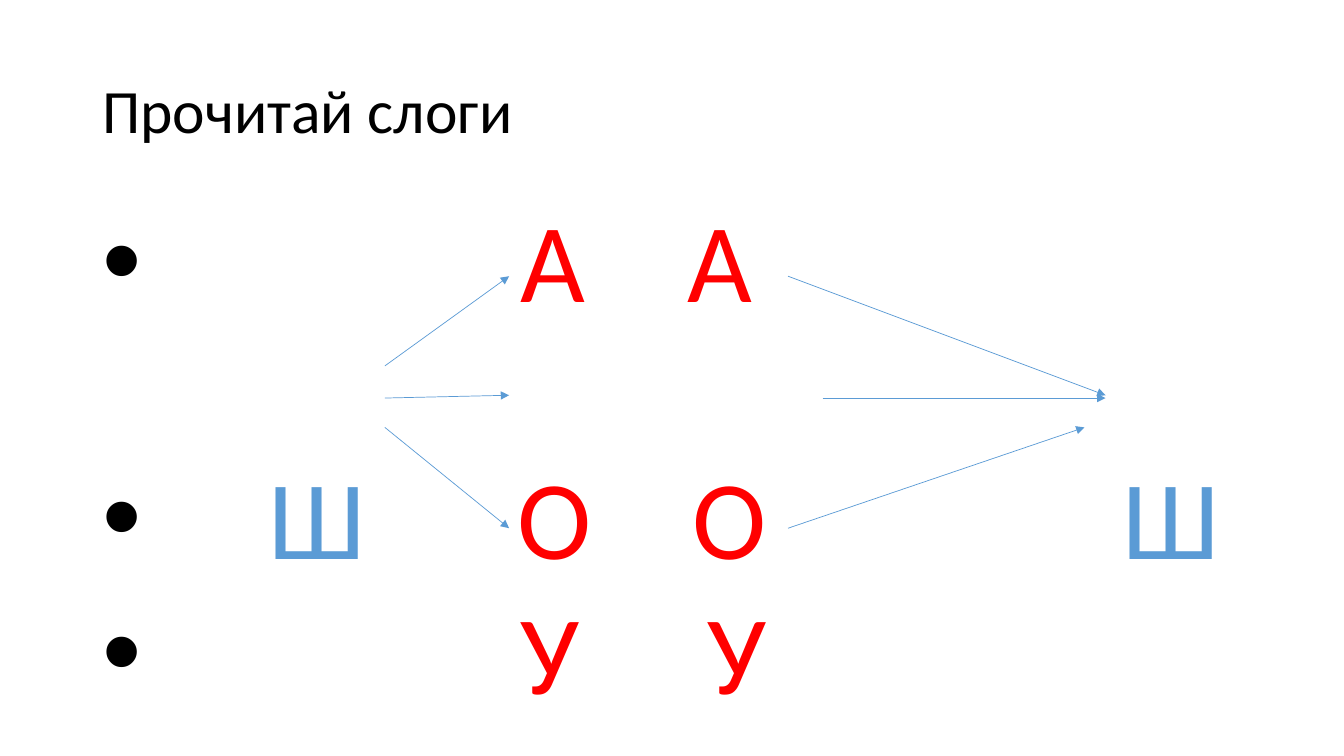
from dataclasses import dataclass

from lxml.etree import SubElement
from pptx import Presentation
from pptx.dml.color import RGBColor as Rgb
from pptx.enum.shapes import MSO_CONNECTOR as Connector
from pptx.enum.text import MSO_ANCHOR as Anchor
from pptx.oxml.ns import qn
from pptx.util import Cm, Pt


@dataclass(frozen=True)
class Theme:
    """Colours, font and type sizes of the slide."""
    font: str = "Calibri"
    ink: Rgb = Rgb(0x00, 0x00, 0x00)
    vowel: Rgb = Rgb(0xFF, 0x00, 0x00)
    consonant: Rgb = Rgb(0x5B, 0x9B, 0xD5)
    title_size: int = 44
    letter_size: int = 80
    arrow_width: float = 0.5


class SyllablePage:
    """Draws the elements of one page in one theme."""

    def __init__(self, deck, theme):
        self.theme = theme
        self.page = deck.slides.add_slide(deck.slide_layouts[6])

    def add_box(self, left, top, width, height, anchor):
        box = self.page.shapes.add_textbox(Cm(left), Cm(top), Cm(width), Cm(height))
        box.text_frame.word_wrap = True
        box.text_frame.vertical_anchor = anchor
        return box.text_frame

    def add_span(self, para, text, size, color):
        span = para.add_run()
        span.text = text
        span.font.name = self.theme.font
        span.font.size = Pt(size)
        span.font.color.rgb = color

    def add_title(self, text):
        frame = self.add_box(2.33, 1.01, 29.21, 3.68, Anchor.MIDDLE)
        para = frame.paragraphs[0]
        para.line_spacing = 0.9
        self.add_span(para, text, self.theme.title_size, self.theme.ink)

    def add_letter_rows(self, rows):
        left, inset, indent = 2.33, 0.25, 0.64
        frame = self.add_box(left, 5.06, 29.21, 12.09, Anchor.TOP)
        for index, (space_before, letters) in enumerate(rows):
            para = frame.add_paragraph() if index else frame.paragraphs[0]
            para.line_spacing = 0.9
            para.space_before = Pt(space_before)
            self.add_bullet(para, indent, [x - left - inset for x, _, _ in letters])
            for _, letter, color in letters:
                self.add_span(para, f"\t{letter}", self.theme.letter_size, color)

    def add_bullet(self, para, indent, stops):
        props = para._p.get_or_add_pPr()
        props.set("marL", str(Cm(indent)))
        props.set("indent", str(-Cm(indent)))
        bullet_color = SubElement(props, qn("a:buClr"))
        SubElement(bullet_color, qn("a:srgbClr"), val=str(self.theme.ink))
        SubElement(props, qn("a:buFont"), typeface="Arial")
        SubElement(props, qn("a:buChar"), char="•")
        tabs = SubElement(props, qn("a:tabLst"))
        for stop in stops:
            SubElement(tabs, qn("a:tab"), pos=str(Cm(stop)), algn="l")

    def add_arrow(self, start, end):
        ends = [Cm(value) for value in (*start, *end)]
        arrow = self.page.shapes.add_connector(Connector.STRAIGHT, *ends)
        arrow.line.color.rgb = self.theme.consonant
        arrow.line.width = Pt(self.theme.arrow_width)
        props = arrow.element.spPr
        SubElement(props.find(qn("a:ln")), qn("a:tailEnd"), type="triangle")
        SubElement(props, qn("a:effectLst"))


def main():
    deck = Presentation()
    deck.slide_width, deck.slide_height = Cm(33.87), Cm(19.05)
    theme = Theme()
    page = SyllablePage(deck, theme)
    red, blue = theme.vowel, theme.consonant

    page.add_title("Прочитай слоги")
    page.add_letter_rows([
        (10, [(13.13, "А", red), (17.32, "А", red)]),
        (97, [(6.77, "Ш", blue), (13.03, "О", red),
              (17.45, "О", red), (28.3, "Ш", blue)]),
        (10, [(13.13, "У", red), (17.82, "У", red)]),
    ])

    high, middle, low = 6.96, 9.96, 13.31
    for start_y, end_y in ((9.22, high), (10.03, middle), (10.77, low)):
        page.add_arrow((9.7, start_y), (12.83, end_y))
    page.add_arrow((19.86, high), (27.86, middle))
    page.add_arrow((20.73, 10.03), (27.86, 10.03))
    page.add_arrow((19.86, low), (27.33, 10.77))

    deck.save("out.pptx")


if __name__ == "__main__":
    main()
